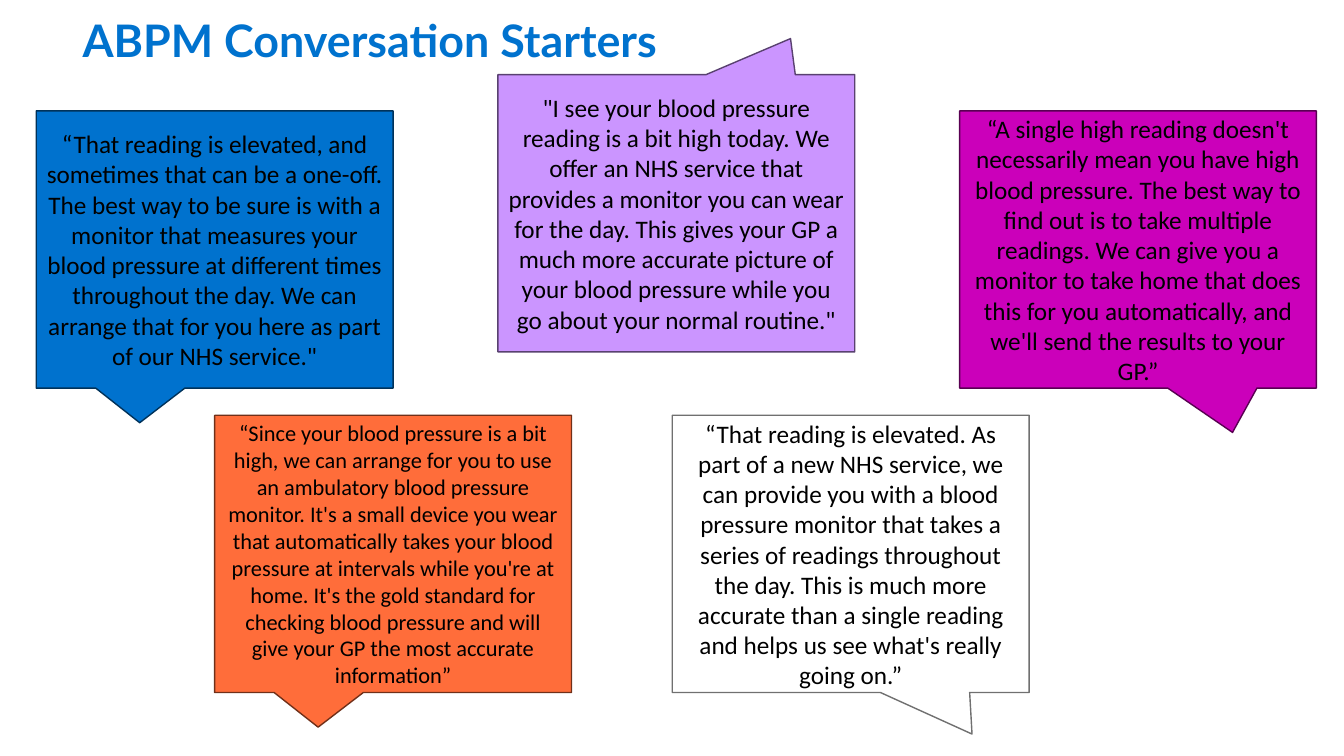
from pptx import Presentation
from pptx.dml.color import RGBColor
from pptx.enum.shapes import MSO_SHAPE
from pptx.enum.text import MSO_ANCHOR, PP_ALIGN
from pptx.util import Pt

COLORS = {
    "blue": "0072CE", "navy": "00325A",
    "lilac": "CB95FF", "plum": "594170",
    "orange": "FF6D3A", "brown": "703019",
    "pink": "CB00BA", "wine": "590052",
    "white": "FFFFFF", "grey": "707070",
    "black": "000000",
}


def color(name):
    return RGBColor.from_string(COLORS[name])


def style(para, font, size, ink, bold=False):
    for run in para.runs:
        run.font.name = font
        run.font.size = Pt(size)
        run.font.bold = bold
        run.font.color.rgb = color(ink)


deck = Presentation()
deck.slide_width, deck.slide_height = Pt(960), Pt(540)
slide = deck.slides.add_slide(deck.slide_layouts[6])

# Title
title = slide.shapes.add_textbox(Pt(51.84), Pt(0), Pt(856.08), Pt(105.84))
title.text_frame.word_wrap = True
para = title.text_frame.paragraphs[0]
para.text = "ABPM Conversation Starters"
para.line_spacing = 1.15
style(para, "Lato", 32, "blue", True)

# Speech bubbles: left, top, tail x, tail y, fill, line, text size, words
WIDTH, HEIGHT = 254.88, 198
LEFT_TAIL = (-0.21, 0.625)
bubbles = [
    (25.92, 79.2, LEFT_TAIL, "blue", "navy", 18,
     "“That reading is elevated, and sometimes that can be a one-off. "
     "The best way to be sure is with a monitor that measures your blood "
     "pressure at different times throughout the day. We can arrange that "
     "for you here as part of our NHS service.\""),
    (355.68, 53.28, (0.32, -0.63), "lilac", "plum", 18,
     "\"I see your blood pressure reading is a bit high today. We offer an "
     "NHS service that provides a monitor you can wear for the day. This "
     "gives your GP a much more accurate picture of your blood pressure "
     "while you go about your normal routine.\""),
    (153.36, 296.64, LEFT_TAIL, "orange", "brown", 16,
     "“Since your blood pressure is a bit high, we can arrange for you to "
     "use an ambulatory blood pressure monitor. It's a small device you "
     "wear that automatically takes your blood pressure at intervals while "
     "you're at home. It's the gold standard for checking blood pressure "
     "and will give your GP the most accurate information”"),
    (685.44, 79.2, (0.265, 0.66), "pink", "wine", 18,
     "“A single high reading doesn't necessarily mean you have high blood "
     "pressure. The best way to find out is to take multiple readings. We "
     "can give you a monitor to take home that does this for you "
     "automatically, and we'll send the results to your GP.”"),
    (480.24, 296.64, (0.34, 0.65), "white", "grey", 18,
     "“That reading is elevated. As part of a new NHS service, we can "
     "provide you with a blood pressure monitor that takes a series of "
     "readings throughout the day. This is much more accurate than a single "
     "reading and helps us see what's really going on.”"),
]
for left, top, tail, fill, line, size, words in bubbles:
    bubble = slide.shapes.add_shape(
        MSO_SHAPE.RECTANGULAR_CALLOUT, Pt(left), Pt(top), Pt(WIDTH), Pt(HEIGHT))
    bubble.adjustments[0], bubble.adjustments[1] = tail
    bubble.shadow.inherit = False
    bubble.fill.solid()
    bubble.fill.fore_color.rgb = color(fill)
    bubble.line.color.rgb = color(line)
    bubble.line.width = Pt(1)
    frame = bubble.text_frame
    frame.word_wrap = True
    frame.vertical_anchor = MSO_ANCHOR.MIDDLE
    para = frame.paragraphs[0]
    para.text = words
    para.alignment = PP_ALIGN.CENTER
    style(para, "Calibri", size, "black")

deck.save("out.pptx")
